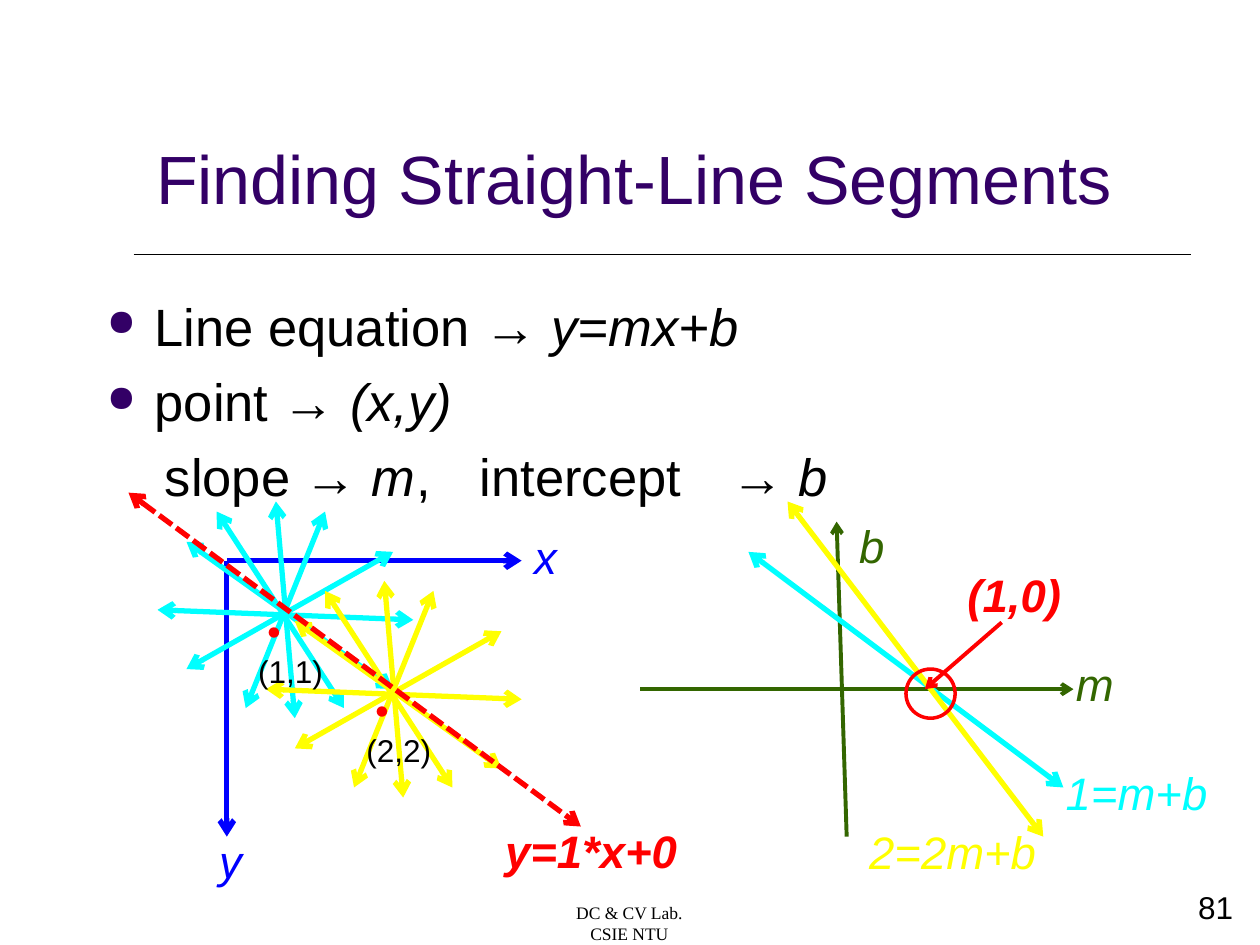
from dataclasses import dataclass

from lxml.etree import SubElement
from pptx import Presentation
from pptx.dml.color import RGBColor
from pptx.enum.dml import MSO_LINE
from pptx.enum.shapes import MSO_CONNECTOR, MSO_SHAPE
from pptx.enum.text import MSO_ANCHOR, PP_ALIGN
from pptx.oxml.ns import qn
from pptx.util import Inches, Pt

BLACK = RGBColor(0, 0, 0)
PURPLE = RGBColor(0x33, 0, 0x66)
BLUE = RGBColor(0, 0, 0xFF)
GREEN = RGBColor(0x33, 0x66, 0)
CYAN = RGBColor(0, 0xFF, 0xFF)
YELLOW = RGBColor(0xFF, 0xFF, 0)
RED = RGBColor(0xFF, 0, 0)


@dataclass(frozen=True)
class Line:
    start: tuple[float, float]
    end: tuple[float, float]
    color: RGBColor
    width: float = 3
    head: bool = False
    tail: bool = True
    dashed: bool = False


@dataclass(frozen=True)
class Label:
    text: str
    left: float
    top: float
    width: float
    height: float
    color: RGBColor
    size: float = 26
    bold: bool = False
    italic: bool = True
    font: str = "Arial"
    align: PP_ALIGN = PP_ALIGN.LEFT
    anchor: MSO_ANCHOR = MSO_ANCHOR.TOP


@dataclass(frozen=True)
class BodyLine:
    runs: tuple[tuple[str, bool], ...]
    bulleted: bool = True
    tabs: tuple[float, ...] = ()


FAN_LINES = [
    ((1.48, 4.3), (3.12, 5.47)),
    ((1.25, 4.84), (3.28, 4.92)),
    ((1.48, 5.31), (3.12, 4.38)),
    ((1.72, 4.06), (2.73, 5.62)),
    ((2.19, 3.98), (2.34, 5.7)),
    ((2.58, 4.06), (1.95, 5.62)),
]
POINT_STEP = (0.86, 0.63)

AXES = [
    Line((1.8, 4.45), (4.14, 4.45), BLUE),
    Line((1.8, 4.45), (1.8, 6.64), BLUE),
    Line((5.08, 5.47), (8.52, 5.47), GREEN, 2.25),
    Line((6.72, 6.64), (6.64, 4.14), GREEN, 2.25),
    Line((5.94, 4.38), (8.44, 6.25), CYAN, head=True),
]
LABELS = [
    Label("x", 4.14, 4.15, 0.78, 0.54, BLUE),
    Label("y", 1.64, 6.56, 0.78, 0.54, BLUE),
    Label("b", 6.72, 4.06, 0.78, 0.54, GREEN),
    Label("m", 8.44, 5.16, 0.78, 0.54, GREEN),
    Label("1=m+b", 8.36, 6.02, 1.64, 0.54, CYAN),
    Label("2=2m+b", 6.8, 6.49, 1.64, 0.54, YELLOW),
    Label("(1,0)", 7.58, 4.45, 1.72, 0.54, RED, bold=True),
    Label("y=1*x+0", 3.91, 6.48, 1.95, 0.54, RED, bold=True),
    Label("81", 9.41, 7, 0.51, 0.4, BLACK, 18, italic=False),
    Label("DC & CV Lab.\nCSIE NTU", 3.41, 7.11, 3.17, 0.5, BLACK, 10,
          italic=False, font="Times New Roman", align=PP_ALIGN.CENTER),
]
TITLE = Label("Finding Straight-Line Segments", 1.14, 0.36, 8.86, 1.42, PURPLE, 39,
              italic=False, anchor=MSO_ANCHOR.BOTTOM)
BODY = [
    BodyLine((("Line equation → ", False), ("y=mx+b", True))),
    BodyLine((("point → ", False), ("(x,y)", True))),
    BodyLine((("slope → ", False), ("m", True), ("\t,\tintercept\t→ ", False), ("b", True)),
             bulleted=False, tabs=(2.69, 3.14, 5.03)),
]


def add_line(slide, line: Line) -> None:
    connector = slide.shapes.add_connector(
        MSO_CONNECTOR.STRAIGHT, *(Inches(value) for value in line.start + line.end))
    connector.line.color.rgb = line.color
    connector.line.width = Pt(line.width)
    if line.dashed:
        connector.line.dash_style = MSO_LINE.SQUARE_DOT
    outline = connector.line._get_or_add_ln()
    for tag, wanted in (("a:headEnd", line.head), ("a:tailEnd", line.tail)):
        if wanted:
            SubElement(outline, qn(tag), type="arrow")
    SubElement(connector._element.spPr, qn("a:effectLst"))


def add_frame(slide, left: float, top: float, width: float, height: float):
    box = slide.shapes.add_textbox(Inches(left), Inches(top), Inches(width), Inches(height))
    box.text_frame.word_wrap = True
    return box.text_frame


def add_label(slide, label: Label) -> None:
    frame = add_frame(slide, label.left, label.top, label.width, label.height)
    frame.vertical_anchor = label.anchor
    frame.text = label.text
    for paragraph in frame.paragraphs:
        paragraph.alignment = label.align
        font = paragraph.font
        font.name, font.size = label.font, Pt(label.size)
        font.bold, font.italic = label.bold, label.italic
        font.color.rgb = label.color


def add_body(slide, lines: list[BodyLine]) -> None:
    frame = add_frame(slide, 0.75, 2.23, 9, 4.82)
    frame.margin_top = Inches(0.1)
    for index, line in enumerate(lines):
        paragraph = frame.add_paragraph() if index else frame.paragraphs[0]
        if index:
            paragraph.space_before = Pt(7)
        properties = paragraph._p.get_or_add_pPr()
        if line.bulleted:
            properties.set("marL", str(Inches(0.38)))
            properties.set("indent", str(Inches(-0.38)))
            color = SubElement(properties, qn("a:buClr"))
            SubElement(color, qn("a:srgbClr"), val=str(PURPLE))
            SubElement(properties, qn("a:buSzPct"), val="70000")
            SubElement(properties, qn("a:buChar"), char="●")
        else:
            properties.set("marL", str(Inches(0.46)))
            properties.set("indent", "0")
        if line.tabs:
            stops = SubElement(properties, qn("a:tabLst"))
            for position in line.tabs:
                SubElement(stops, qn("a:tab"), pos=str(Inches(position)), algn="l")
        paragraph.font.name = "Arial"
        paragraph.font.size = Pt(30)
        paragraph.font.color.rgb = BLACK
        for text, italic in line.runs:
            run = paragraph.add_run()
            run.text = text
            run.font.italic = italic


def add_fan(slide, step: int, color: RGBColor) -> None:
    shift_x, shift_y = (step * distance for distance in POINT_STEP)
    for start, end in FAN_LINES:
        add_line(slide, Line((start[0] + shift_x, start[1] + shift_y),
                             (end[0] + shift_x, end[1] + shift_y), color, head=True))


def add_point(slide, step: int, name: str) -> None:
    frame = add_frame(slide, 1.95 + step * POINT_STEP[0], 4.49 + step * POINT_STEP[1], 1.17, 0.74)
    paragraph = frame.paragraphs[0]
    paragraph.font.name = "Arial"
    for text, size, color in (("．", 38, RED), (name, 18, BLACK)):
        run = paragraph.add_run()
        run.text = text
        run.font.size = Pt(size)
        run.font.color.rgb = color


def main() -> None:
    presentation = Presentation()
    presentation.slide_width, presentation.slide_height = Inches(10), Inches(7.5)
    slide = presentation.slides.add_slide(presentation.slide_layouts[6])
    add_line(slide, Line((1.06, 2.02), (9.45, 2.02), BLACK, 0.5, tail=False))
    add_label(slide, TITLE)
    add_body(slide, BODY)
    for axis in AXES:
        add_line(slide, axis)
    for step, color in enumerate((CYAN, YELLOW)):
        add_fan(slide, step, color)
    for step, name in enumerate(("(1,1)", "(2,2)")):
        add_point(slide, step, name)
    add_line(slide, Line((6.25, 3.98), (8.28, 6.64), YELLOW, head=True))
    circle = slide.shapes.add_shape(
        MSO_SHAPE.OVAL, Inches(7.19), Inches(5.31), Inches(0.39), Inches(0.39))
    circle.shadow.inherit = False
    circle.fill.background()
    circle.line.color.rgb = RED
    circle.line.width = Pt(2)
    add_line(slide, Line((1.02, 3.91), (4.61, 6.56), RED, head=True, dashed=True))
    add_line(slide, Line((7.95, 4.94), (7.34, 5.47), RED, 2.25))
    for label in LABELS:
        add_label(slide, label)
    presentation.save("out.pptx")


if __name__ == "__main__":
    main()
